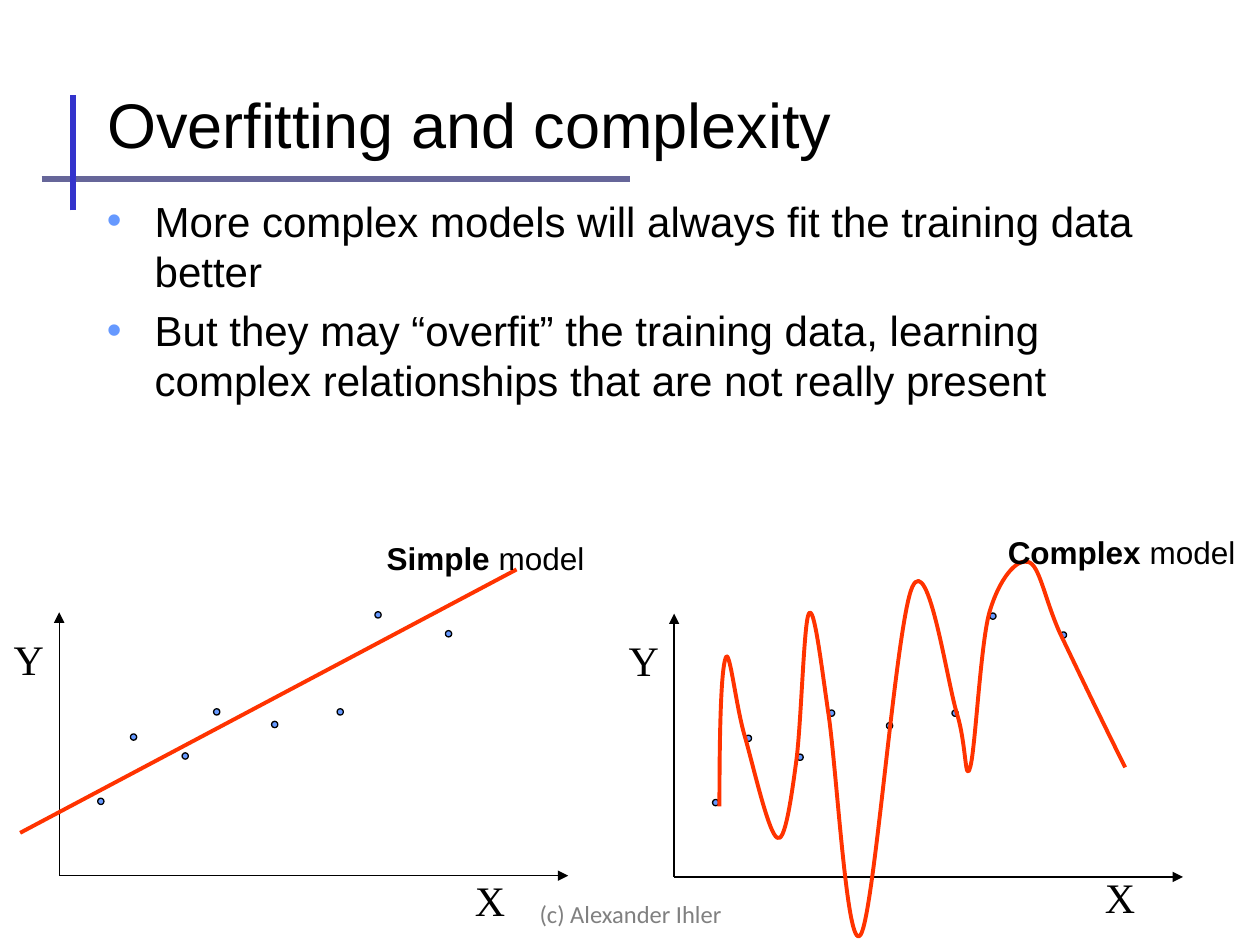
from lxml.etree import SubElement
from pptx import Presentation
from pptx.dml.color import RGBColor
from pptx.enum.shapes import MSO_CONNECTOR, MSO_SHAPE
from pptx.enum.text import MSO_ANCHOR, MSO_AUTO_SIZE, PP_ALIGN
from pptx.oxml.ns import qn
from pptx.util import Inches, Pt

COLORS = {"text": "000000", "rule": "666699", "bar": "3333CC",
          "point": "6699FF", "model": "FF3300", "footer": "808080"}

presentation = Presentation()
presentation.slide_width, presentation.slide_height = Inches(10), Inches(7.5)
slide = presentation.slides.add_slide(presentation.slide_layouts[5])
shapes = slide.shapes


def write_text(shape, paragraphs, font="Arial", size=24, color="text", wrap=True,
               anchor=MSO_ANCHOR.TOP, align=PP_ALIGN.LEFT, bullet=False):
    """Fill a shape; each paragraph is a list of (text, bold) runs."""
    frame = shape.text_frame
    frame.word_wrap = wrap
    frame.auto_size = MSO_AUTO_SIZE.NONE
    frame.vertical_anchor = anchor
    for index, runs in enumerate(paragraphs):
        paragraph = frame.add_paragraph() if index else frame.paragraphs[0]
        paragraph.alignment = align
        for text, bold in runs:
            run = paragraph.add_run()
            run.text = text
            run.font.name, run.font.size, run.font.bold = font, Pt(size), bold
            run.font.color.rgb = RGBColor.from_string(COLORS[color])
        if bullet:
            paragraph.space_before = Pt(0.2 * size)
            properties = paragraph._p.get_or_add_pPr()
            properties.set("marL", str(Inches(0.38)))
            properties.set("indent", str(-Inches(0.38)))
            bullet_color = SubElement(properties, qn("a:buClr"))
            SubElement(bullet_color, qn("a:srgbClr"), val=COLORS["point"])
            SubElement(properties, qn("a:buFont"), typeface="Arial")
            SubElement(properties, qn("a:buChar"), char="•")


def draw_line(start, end, color, width, arrow=False):
    """Draw a straight line without shadow, with an optional arrowhead at its end."""
    line = shapes.add_connector(MSO_CONNECTOR.STRAIGHT, *map(Inches, start + end))
    line.line.color.rgb = RGBColor.from_string(COLORS[color])
    line.line.width = Pt(width)
    if arrow:
        SubElement(line.line._get_or_add_ln(), qn("a:tailEnd"), type="triangle")
    SubElement(line._element.spPr, qn("a:effectLst"))


# Title with its crossed rules
draw_line((0.33, 1.42), (5, 1.42), "rule", 3)
draw_line((0.58, 1.67), (0.58, 0.75), "bar", 3)
title = shapes.title
title.left, title.top, title.width, title.height = map(Inches, (0.75, 0.25, 8.5, 1.08))
write_text(title, [[("Overfitting and complexity", False)]], size=36,
           anchor=MSO_ANCHOR.BOTTOM)

# Bullets
body = shapes.add_textbox(*map(Inches, (0.75, 1.5, 8.5, 5.25)))
write_text(body, [
    [("More complex models will always fit the training data better", False)],
    [("But they may “overfit” the training data, learning complex relationships "
      "that are not really present", False)],
], bullet=True)

# Two plots of the same data: name, origin, places of X label and caption from the origin
AXIS_WIDTH, AXIS_HEIGHT, DOT = 4.04, 2.09, 0.05
DATA = [(0.33, 0.59), (0.59, 1.10), (1.00, 0.95), (1.25, 1.30),
        (1.71, 1.20), (2.23, 1.30), (2.53, 2.07), (3.09, 1.92)]
PLOTS = [("Complex", 5.35, 6.96, (3.32, -0.09), (2.55, -2.78)),
         ("Simple", 0.47, 6.95, (3.20, -0.06), (2.50, -2.72))]

# Each cubic segment: two control points and the end point
CURVE_START = (5.71, 6.40)
CURVE = [
    [(5.71, 5.86), (5.72, 5.32), (5.76, 5.22)],
    [(5.79, 5.13), (5.84, 5.60), (5.91, 5.84)],
    [(5.98, 6.08), (6.10, 6.62), (6.17, 6.65)],
    [(6.23, 6.69), (6.28, 6.34), (6.32, 6.04)],
    [(6.36, 5.74), (6.38, 4.93), (6.42, 4.87)],
    [(6.46, 4.80), (6.51, 5.21), (6.57, 5.63)],
    [(6.64, 6.06), (6.72, 7.58), (6.83, 7.42)],
    [(6.94, 7.26), (7.11, 4.95), (7.24, 4.66)],
    [(7.37, 4.37), (7.52, 5.44), (7.60, 5.68)],
    [(7.67, 5.92), (7.66, 6.23), (7.70, 6.09)],
    [(7.74, 5.96), (7.78, 5.14), (7.85, 4.87)],
    [(7.93, 4.59), (8.07, 4.43), (8.16, 4.46)],
    [(8.25, 4.48), (8.29, 4.75), (8.41, 5.02)],
    [(8.54, 5.29), (8.73, 5.69), (8.93, 6.09)],
]

for name, left, bottom, x_label, caption in PLOTS:
    # Axes
    draw_line((left, bottom), (left, bottom - AXIS_HEIGHT), "text", 0.75, arrow=True)
    draw_line((left, bottom), (left + AXIS_WIDTH, bottom), "text", 0.75, arrow=True)

    # Data points
    for x, y in DATA:
        dot = shapes.add_shape(MSO_SHAPE.OVAL, Inches(left + x - DOT / 2),
                               Inches(bottom - y - DOT / 2), Inches(DOT), Inches(DOT))
        dot.shadow.inherit = False
        dot.fill.solid()
        dot.fill.fore_color.rgb = RGBColor.from_string(COLORS["point"])
        dot.line.color.rgb = RGBColor.from_string(COLORS["text"])
        dot.line.width = Pt(0.75)

    # Axis labels
    for letter, (x, y) in (("X", x_label), ("Y", (-0.46, -1.97))):
        label = shapes.add_textbox(Inches(left + x), Inches(bottom + y),
                                   Inches(0.44), Inches(0.46))
        write_text(label, [[(letter, False)]], font="Times New Roman", wrap=False)

    # Fitted model
    if name == "Simple":
        draw_line((0.16, 6.61), (4.1, 4.52), "model", 2.25)
    else:
        builder = shapes.build_freeform(*map(Inches, CURVE_START))
        builder.add_line_segments(
            [tuple(map(Inches, point)) for segment in CURVE for point in segment],
            close=False)
        curve = builder.convert_to_shape()
        # Turn every three straight segments into one cubic segment
        outline = next(curve._element.iter(qn("a:path")))
        steps = outline.findall(qn("a:lnTo"))
        for index in range(0, len(steps), 3):
            cubic = SubElement(outline, qn("a:cubicBezTo"))
            for step in steps[index:index + 3]:
                cubic.append(step[0])
                outline.remove(step)
        curve.shadow.inherit = False
        curve.fill.background()
        curve.line.color.rgb = RGBColor.from_string(COLORS["model"])
        curve.line.width = Pt(2.25)

    # Caption
    box = shapes.add_textbox(Inches(left + caption[0]), Inches(bottom + caption[1]),
                             Inches(2.03), Inches(0.4))
    write_text(box, [[(name, True), (" model", False)]], size=18, wrap=False)

# Footer
footer = shapes.add_textbox(*map(Inches, (3.42, 6.92, 3.17, 0.5)))
write_text(footer, [[("(c) Alexander Ihler", False)]], font="Calibri", size=14,
           color="footer", anchor=MSO_ANCHOR.BOTTOM, align=PP_ALIGN.CENTER)

presentation.save("out.pptx")
